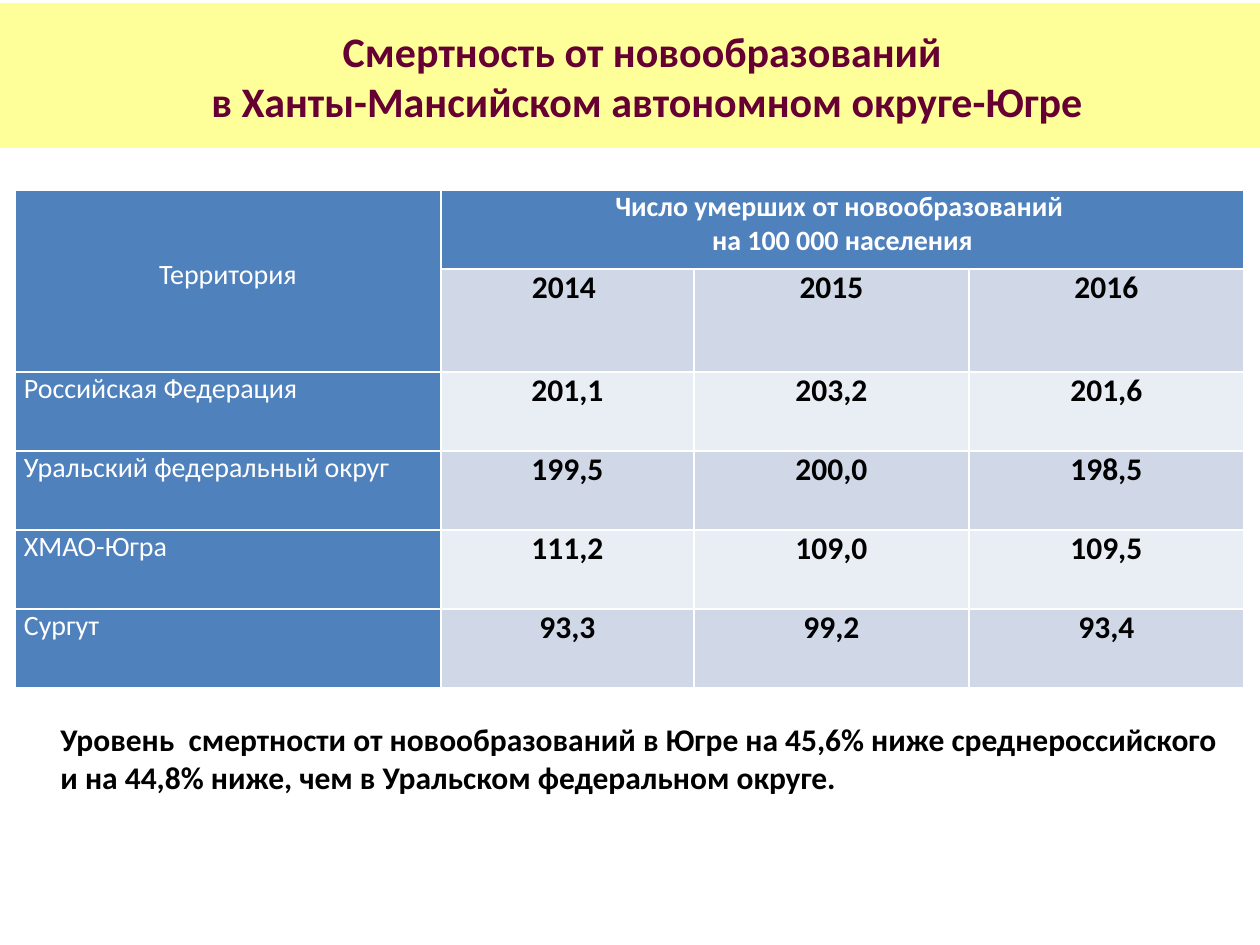
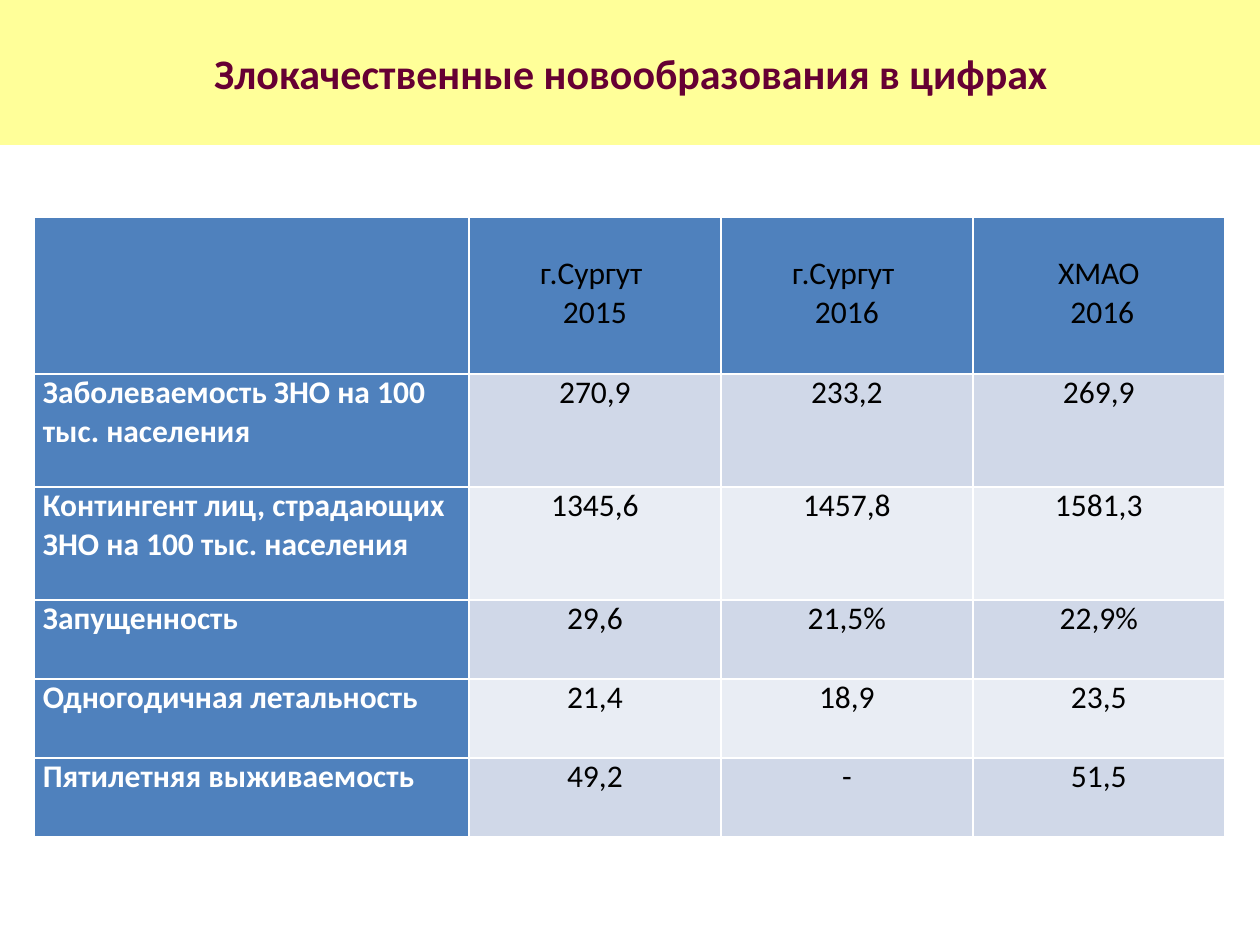
from pptx import Presentation
from pptx.dml.color import RGBColor
from pptx.enum.shapes import MSO_SHAPE
from pptx.enum.text import MSO_ANCHOR, PP_ALIGN
from pptx.oxml.ns import qn
from pptx.util import Pt
from lxml import etree

RECTANGLE = MSO_SHAPE.RECTANGLE
TOP, MIDDLE = MSO_ANCHOR.TOP, MSO_ANCHOR.MIDDLE
LEFT, CENTER = PP_ALIGN.LEFT, PP_ALIGN.CENTER

PX = 914400 // 126  # EMU in one px
SLIDE_WIDTH, SLIDE_HEIGHT = 1260, 945

FONT = "Calibri"
BAND_YELLOW = RGBColor(0xFF, 0xFF, 0x99)
TITLE_MAROON = RGBColor(0x66, 0x00, 0x33)
HEADER_BLUE = RGBColor(0x4F, 0x81, 0xBD)
ROW_TINTS = (RGBColor(0xD0, 0xD8, 0xE8), RGBColor(0xE9, 0xED, 0xF4))
WHITE = RGBColor(0xFF, 0xFF, 0xFF)
BLACK = RGBColor(0x00, 0x00, 0x00)

BAND_HEIGHT = 145
CELL_INSET = 9
BORDER_WIDTH = Pt(1)


def px(*lengths):
    return [length * PX for length in lengths]


def write_lines(frame, lines, size, color, bold=False, align=LEFT):
    """Write one paragraph per line, each as a single run."""
    for index, line in enumerate(lines):
        paragraph = frame.add_paragraph() if index else frame.paragraphs[0]
        paragraph.alignment = align
        run = paragraph.add_run()
        run.text = line
        run.font.name = FONT
        run.font.size = Pt(size)
        run.font.bold = bold
        run.font.color.rgb = color


def write_title(frame, lines):
    frame.word_wrap = True
    frame.vertical_anchor = MIDDLE
    write_lines(frame, lines, 24, TITLE_MAROON, True, CENTER)


def add_band(slide, top, width):
    band = slide.shapes.add_shape(RECTANGLE, *px(0, top, width, BAND_HEIGHT))
    band.shadow.inherit = False
    band.fill.solid()
    band.fill.fore_color.rgb = BAND_YELLOW
    band.line.fill.background()
    return band


def add_text_box(slide, left, top, width, height):
    frame = slide.shapes.add_textbox(*px(left, top, width, height)).text_frame
    frame.word_wrap = True
    return frame


def add_grid(slide, left, top, widths, heights):
    grid = slide.shapes.add_table(
        len(heights), len(widths), *px(left, top, sum(widths), sum(heights))
    ).table
    grid.first_row = grid.horz_banding = False
    for column, width in zip(grid.columns, px(*widths)):
        column.width = width
    for row, height in zip(grid.rows, px(*heights)):
        row.height = height
    for cell in grid.iter_cells():
        add_borders(cell)
    return grid


def add_borders(cell):
    properties = cell._tc.get_or_add_tcPr()
    for side in ("a:lnL", "a:lnR", "a:lnT", "a:lnB"):
        border = etree.SubElement(properties, qn(side), w=str(BORDER_WIDTH))
        fill = etree.SubElement(border, qn("a:solidFill"))
        etree.SubElement(fill, qn("a:srgbClr"), val=str(WHITE))


def fill_cell(cell, fill, lines, size, color, bold=False, align=CENTER, drop=0):
    """Colour and write a cell; drop is the space above its text."""
    cell.fill.solid()
    cell.fill.fore_color.rgb = fill
    cell.margin_left = cell.margin_right = CELL_INSET * PX
    cell.margin_top, cell.margin_bottom = drop * PX, 0
    cell.vertical_anchor = TOP
    write_lines(cell.text_frame, lines, size, color, bold, align)


def fill_values(grid, row, values, tint, bold):
    for column, value in enumerate(values, 1):
        fill_cell(grid.cell(row, column), tint, [value], 18, BLACK, bold)


def fill_records(grid, first_row, records, label_size, bold_labels, tints):
    """Write rows of a blue label and tinted values, bold where labels are not."""
    for index, (label, *values) in enumerate(records):
        row = first_row + index
        fill_cell(grid.cell(row, 0), HEADER_BLUE, [label], label_size, WHITE,
                  bold_labels, LEFT)
        fill_values(grid, row, values, tints[index % 2], not bold_labels)


def build_mortality(slide):
    # Title
    add_band(slide, 3, SLIDE_WIDTH)
    write_title(add_text_box(slide, 49, 18, 1196, 115), [
        "Смертность от новообразований ",
        "в Ханты-Мансийском автономном округе-Югре",
    ])

    # Table header: territory beside the deaths by year
    grid = add_grid(slide, 15, 190, [426, 253, 275, 275], [79, 103] + [79] * 4)
    territory, deaths = grid.cell(0, 0), grid.cell(0, 1)
    territory.merge(grid.cell(1, 0))
    deaths.merge(grid.cell(0, 3))
    fill_cell(territory, HEADER_BLUE, ["Территория"], 16, WHITE, drop=68)
    fill_cell(deaths, HEADER_BLUE,
              ["Число умерших от новообразований ", "на 100 000 населения"],
              16, WHITE, True)
    fill_values(grid, 1, ["2014 ", "2015", "2016"], ROW_TINTS[0], True)

    # Table body
    fill_records(grid, 2, [
        ("Российская Федерация", "201,1", "203,2", "201,6"),
        ("Уральский федеральный округ", "199,5", "200,0", "198,5"),
        ("ХМАО-Югра", "111,2", "109,0", "109,5"),
        ("Сургут", "93,3", "99,2", "93,4"),
    ], 16, False, ROW_TINTS[::-1])

    # Conclusion
    conclusion = add_text_box(slide, 48, 714, 1191, 127)
    write_lines(conclusion, [
        "Уровень  смертности от новообразований в Югре на 45,6% ниже "
        "среднероссийского и на 44,8% ниже, чем в Уральском федеральном округе.",
    ], 18, BLACK, True)


def build_figures(slide):
    # Title
    band = add_band(slide, 0, SLIDE_WIDTH + 2)
    write_title(band.text_frame, ["Злокачественные новообразования в цифрах"])

    # Table header: place and year
    grid = add_grid(slide, 34, 217, [435] + [252] * 3,
                    [157] + [113] * 2 + [79] * 3)
    headings = [[], ["г.Сургут ", "2015"], ["г.Сургут ", "2016"],
                ["ХМАО", " 2016"]]
    for column, heading in enumerate(headings):
        fill_cell(grid.cell(0, column), HEADER_BLUE, heading, 18, BLACK, drop=38)

    # Table body
    fill_records(grid, 1, [
        ("Заболеваемость ЗНО на 100 тыс. населения", "270,9", "233,2", "269,9"),
        ("Контингент лиц, страдающих ЗНО на 100 тыс. населения",
         "1345,6", "1457,8", "1581,3"),
        ("Запущенность", "29,6", "21,5%", "22,9%"),
        ("Одногодичная летальность", "21,4", "18,9", "23,5"),
        ("Пятилетняя выживаемость", "49,2", "-", "51,5"),
    ], 18, True, ROW_TINTS)


def main():
    deck = Presentation()
    deck.slide_width, deck.slide_height = px(SLIDE_WIDTH, SLIDE_HEIGHT)
    blank = deck.slide_layouts[6]
    for build in (build_mortality, build_figures):
        build(deck.slides.add_slide(blank))
    deck.save("out.pptx")


if __name__ == "__main__":
    main()
